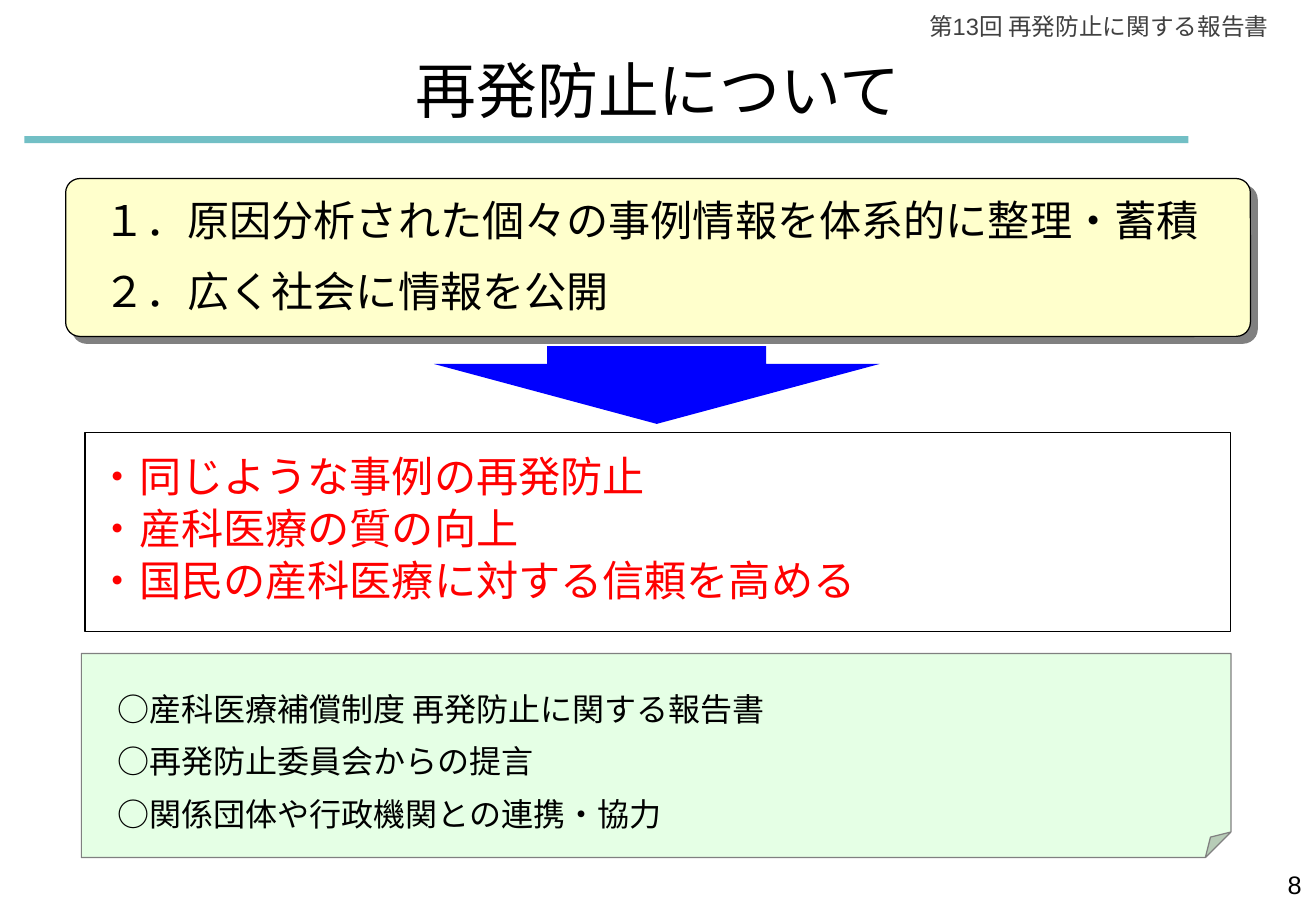
"""Build the slide on preventing recurrence."""
from lxml import etree
from pptx import Presentation, util as u
from pptx.dml.color import RGBColor
from pptx.enum import shapes, text
from pptx.oxml.ns import qn

COLORS = {"teal": "72BFC5", "cream": "FFFFCC", "blue": "0000FF",
          "mint": "E5FFE5", "gray": "808080", "header": "404040",
          "red": "FF0000", "black": "000000"}
JP = "Noto Sans CJK JP"

prs = Presentation()
prs.slide_width, prs.slide_height = u.Inches(10.83), u.Inches(7.5)
s = prs.slides.add_slide(prs.slide_layouts[6])


def add_panel(kind, box, fill=None, line=None, guides=None):
    sp = s.shapes.add_shape(kind, *map(u.Inches, box))
    sp.shadow.inherit = False
    if guides:
        avLst = sp._element.spPr.find(qn("a:prstGeom")).find(qn("a:avLst"))
        avLst.clear()
        for name, value in guides.items():
            etree.SubElement(avLst, qn("a:gd"), name=name, fmla=f"val {value}")
    if fill:
        sp.fill.solid()
        sp.fill.fore_color.rgb = RGBColor.from_string(COLORS[fill])
    else:
        sp.fill.background()
    if line:
        sp.line.color.rgb = RGBColor.from_string(COLORS[line])
        sp.line.width = u.Pt(0.75)
    else:
        sp.line.fill.background()
    return sp


def write(sp, lines, size, color="black", font=JP, align=text.PP_ALIGN.LEFT,
          anchor=text.MSO_ANCHOR.TOP, wrap=True, height=None, gap=0, hang=0):
    tf = sp.text_frame
    tf.word_wrap = wrap
    tf.vertical_anchor = anchor
    for i, line in enumerate(lines):
        p = tf.add_paragraph() if i else tf.paragraphs[0]
        p.alignment = align
        if height:
            p.line_spacing = u.Pt(height)
        if i:
            p.space_before = u.Pt(gap)
        if hang:
            pPr = p._p.get_or_add_pPr()
            pPr.set("marL", str(u.Inches(hang)))
            pPr.set("indent", str(-u.Inches(hang)))
        r = p.add_run()
        r.text = line
        r.font.size = u.Pt(size)
        r.font.name = font
        r.font.color.rgb = RGBColor.from_string(COLORS[color])
        etree.SubElement(r._r.rPr, qn("a:ea"), typeface=JP)


SHAPE = shapes.MSO_SHAPE
add_panel(SHAPE.RECTANGLE, (0.2, 1.12, 9.58, 0.06), "teal")

measures = add_panel(SHAPE.ROUNDED_RECTANGLE, (0.54, 1.47, 9.75, 1.3),
                     "cream", "black", {"adj": 9000})
effects = measures._element.spPr.find(qn("a:effectLst"))
shadow = etree.SubElement(effects, qn("a:outerShdw"), dist=str(u.Pt(5.7)),
                          dir="2700000", algn="ctr", rotWithShape="0")
etree.SubElement(shadow, qn("a:srgbClr"), val=COLORS["gray"])

goals = add_panel(SHAPE.RECTANGLE, (0.7, 3.56, 9.43, 1.64), line="black")
write(goals, ["・同じような事例の再発防止", "・産科医療の質の向上",
              "・国民の産科医療に対する信頼を高める"],
      25, "red", anchor=text.MSO_ANCHOR.MIDDLE, height=25, gap=6)

add_panel(SHAPE.DOWN_ARROW, (3.57, 2.85, 3.67, 0.64), "blue",
          guides={"adj1": 49100, "adj2": 77100})
add_panel(SHAPE.FOLDED_CORNER, (0.67, 5.38, 9.46, 1.68), "mint", "gray",
          {"adj": 12500})

texts = [
    ((7.38, 0.05, 3.16, 0.34), ["第13回 再発防止に関する報告書"], 14,
     dict(color="header", font="Arial", align=text.PP_ALIGN.RIGHT)),
    ((3.29, 0.38, 4.25, 0.71), ["再発防止について"], 36,
     dict(align=text.PP_ALIGN.CENTER, anchor=text.MSO_ANCHOR.MIDDLE, wrap=False)),
    ((0.75, 1.52, 9.32, 1.15),
     ["１．原因分析された個々の事例情報を体系的に整理・蓄積", "２．広く社会に情報を公開"],
     25, dict(height=32, gap=10, hang=0.41)),
    ((0.87, 5.54, 8.46, 1.36),
     ["○産科医療補償制度 再発防止に関する報告書", "○再発防止委員会からの提言",
      "○関係団体や行政機関との連携・協力"], 19, dict(height=29, gap=2)),
    ((8.28, 7.11, 2.53, 0.52), ["8"], 15,
     dict(font="Arial", align=text.PP_ALIGN.RIGHT)),
]
for box, lines, size, style in texts:
    write(s.shapes.add_textbox(*map(u.Inches, box)), lines, size, **style)

prs.save("out.pptx")
